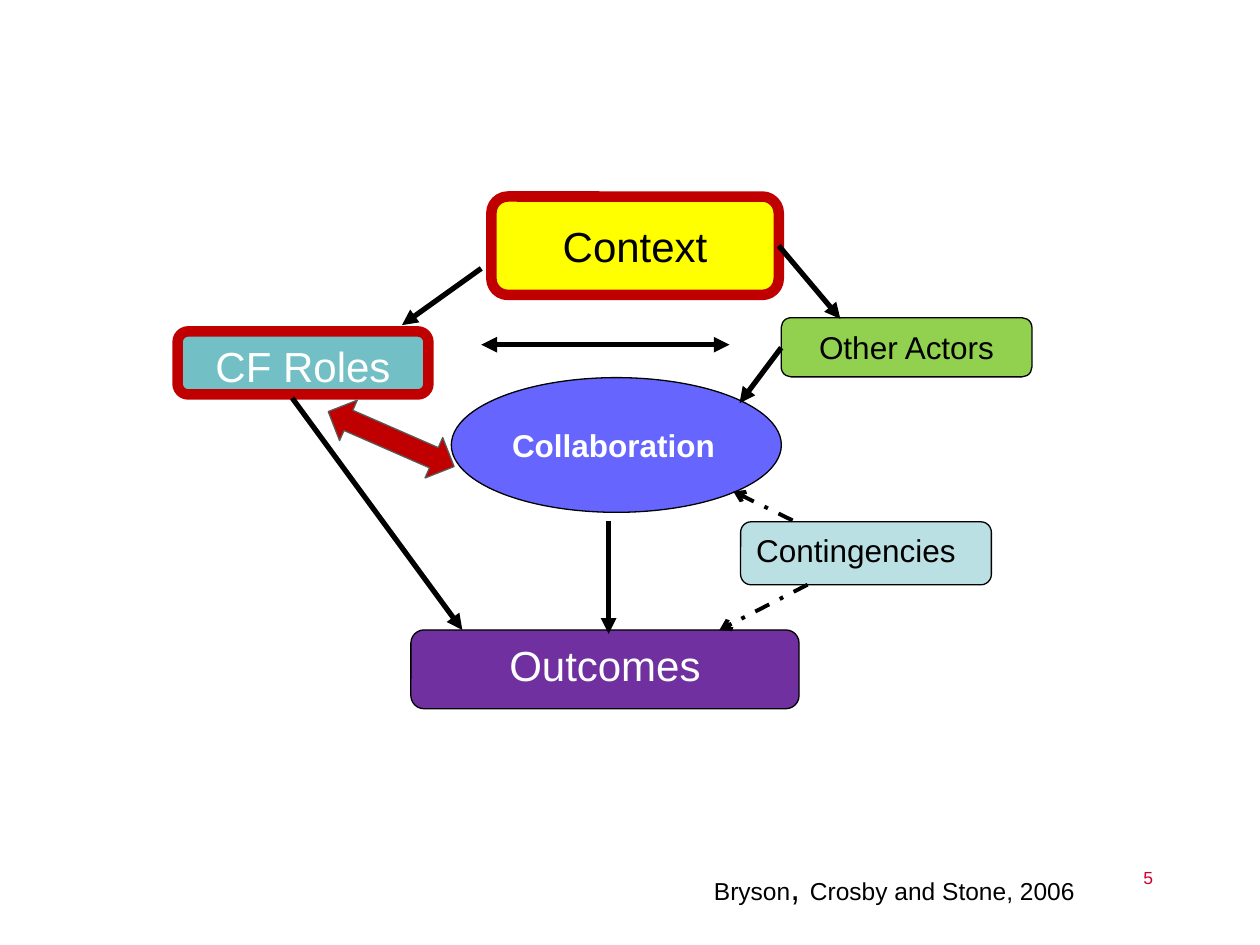
from dataclasses import dataclass

from lxml.etree import SubElement
from pptx import Presentation
from pptx.dml.color import RGBColor
from pptx.enum.dml import MSO_LINE
from pptx.enum.shapes import MSO_CONNECTOR, MSO_SHAPE
from pptx.enum.text import MSO_ANCHOR, PP_ALIGN
from pptx.oxml.ns import qn
from pptx.util import Pt


@dataclass(frozen=True)
class Theme:
    font: str = "Arial"
    black: str = "000000"
    white: str = "FFFFFF"
    red: str = "C00000"
    gray: str = "595959"
    teal: str = "72BFC5"
    yellow: str = "FFFF00"
    green: str = "92D050"
    pale_blue: str = "BBE0E3"
    purple: str = "7030A0"
    blue: str = "6666FF"
    number_red: str = "D00030"
    large: int = 24
    comma: int = 20
    medium: int = 18
    source: int = 14
    number: int = 10
    thin: float = 0.75
    dashed: float = 2.25
    arrow: float = 3
    thick: float = 6


THEME = Theme()


def color(value):
    return RGBColor.from_string(value)


def write_text(shape, *pieces, font_color=THEME.black, bold=False,
               align=PP_ALIGN.CENTER, anchor=MSO_ANCHOR.TOP):
    """Write one paragraph from (text, size) pieces."""
    frame = shape.text_frame
    frame.word_wrap = True
    frame.vertical_anchor = anchor
    paragraph = frame.paragraphs[0]
    paragraph.alignment = align
    for text, size in pieces:
        run = paragraph.add_run()
        run.text = text
        run.font.name = THEME.font
        run.font.size = Pt(size)
        run.font.bold = bold
        run.font.color.rgb = color(font_color)


def add_node(slide, kind, box, fill, line=THEME.black, width=THEME.thin):
    shape = slide.shapes.add_shape(kind, *map(Pt, box))
    shape.shadow.inherit = False
    shape.fill.solid()
    shape.fill.fore_color.rgb = color(fill)
    shape.line.color.rgb = color(line)
    shape.line.width = Pt(width)
    return shape


def add_arrow(slide, start, end, both_ends=False, dashed=False):
    connector = slide.shapes.add_connector(
        MSO_CONNECTOR.STRAIGHT, *map(Pt, start + end))
    line = connector.line
    line.color.rgb = color(THEME.black)
    line.width = Pt(THEME.dashed if dashed else THEME.arrow)
    if dashed:
        line.dash_style = MSO_LINE.DASH_DOT
    # Arrowheads and the empty effect list need XML
    properties = connector.element.spPr
    outline = properties.find(qn("a:ln"))
    head_type = "arrow" if dashed else "triangle"
    for tag in ("a:headEnd", "a:tailEnd") if both_ends else ("a:tailEnd",):
        SubElement(outline, qn(tag), type=head_type)
    SubElement(properties, qn("a:effectLst"))


def add_label(slide, box, *pieces, **text_format):
    label = slide.shapes.add_textbox(*map(Pt, box))
    write_text(label, *pieces, align=PP_ALIGN.RIGHT, **text_format)


def add_nodes(slide):
    rounded = MSO_SHAPE.ROUNDED_RECTANGLE
    red_frame = {"line": THEME.red, "width": THEME.thick}

    roles = add_node(slide, rounded, (101.5, 189.4, 143.3, 36), THEME.teal, **red_frame)
    write_text(roles, ("CF Roles", THEME.large), font_color=THEME.white)

    context = add_node(slide, rounded, (280.8, 112.3, 164.2, 56.2), THEME.yellow, **red_frame)
    write_text(context, ("Context", THEME.large), anchor=MSO_ANCHOR.MIDDLE)

    actors = add_node(slide, rounded, (446.4, 181.6, 143.3, 33.8), THEME.green)
    write_text(actors, ("Other Actors", THEME.medium), anchor=MSO_ANCHOR.MIDDLE)

    contingencies = add_node(slide, rounded, (423.2, 298.2, 143.3, 36), THEME.pale_blue)
    write_text(contingencies, ("Contingencies", THEME.medium), align=PP_ALIGN.LEFT)

    outcomes = add_node(slide, rounded, (234.8, 360, 221.8, 45), THEME.purple)
    write_text(outcomes, ("Outcomes", THEME.large), font_color=THEME.white)

    collaboration = add_node(slide, MSO_SHAPE.OVAL, (257.9, 215.8, 188.6, 77), THEME.blue)
    write_text(collaboration, ("Collaboration", THEME.medium), font_color=THEME.white,
               bold=True, align=PP_ALIGN.LEFT, anchor=MSO_ANCHOR.MIDDLE)


def add_arrows(slide):
    # Context to roles, actors to collaboration, context to actors
    add_arrow(slide, (275, 153.4), (229.7, 185.8))
    add_arrow(slide, (446.4, 198.7), (422.6, 230.4))
    add_arrow(slide, (445, 140.4), (480.2, 182.2))
    # Roles with actors
    add_arrow(slide, (275, 197), (416.9, 197), both_ends=True)
    # Collaboration to outcomes
    add_arrow(slide, (347.8, 298), (347.8, 362.2))
    # Contingencies to collaboration and to outcomes
    add_arrow(slide, (452.9, 297.4), (419, 280.8), dashed=True)
    add_arrow(slide, (461.5, 334.1), (411.1, 360), dashed=True)
    # Roles with collaboration
    block_arrow = add_node(slide, MSO_SHAPE.LEFT_RIGHT_ARROW, (184.3, 238.3, 78.5, 25.2),
                           THEME.red, line=THEME.gray)
    block_arrow.rotation = 23.6
    # Roles to outcomes
    add_arrow(slide, (167, 227.5), (264.2, 360))


def main():
    presentation = Presentation()
    presentation.slide_width, presentation.slide_height = Pt(720), Pt(540)
    slide = presentation.slides.add_slide(presentation.slide_layouts[6])

    # Slide number
    add_label(slide, (516.2, 491.8, 149.8, 36), ("5", THEME.number),
              font_color=THEME.number_red)

    # Diagram
    add_nodes(slide)
    add_arrows(slide)

    # Source of the model
    add_label(slide, (382.3, 491, 239, 31.7), ("Bryson", THEME.source),
              (", ", THEME.comma), ("Crosby and Stone, 2006", THEME.source))

    presentation.save("out.pptx")


if __name__ == "__main__":
    main()
